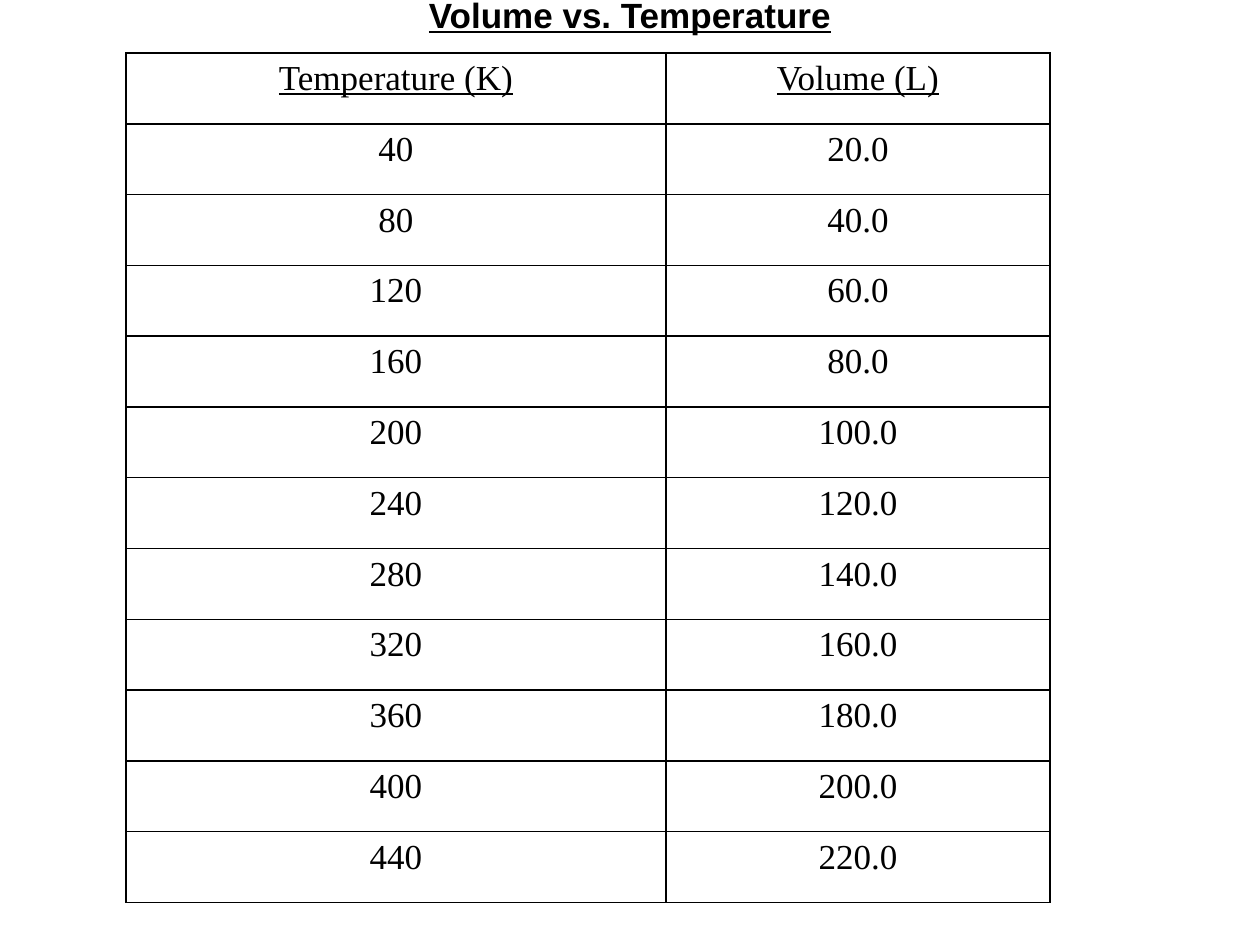
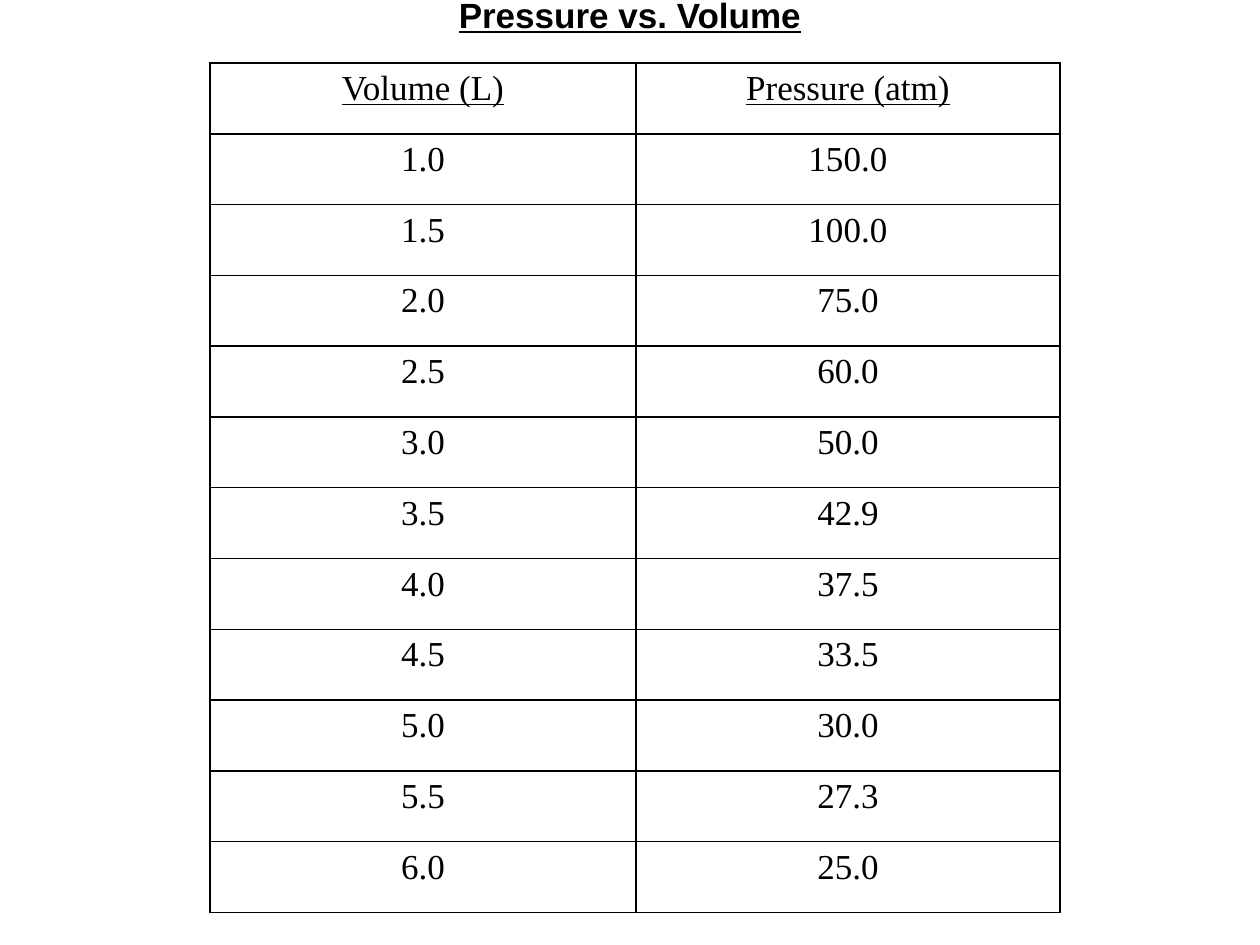
from lxml import etree
from pptx import Presentation
from pptx.dml.color import RGBColor
from pptx.enum.text import MSO_ANCHOR, PP_ALIGN
from pptx.oxml.ns import qn
from pptx.util import Pt

CENTER = PP_ALIGN.CENTER
TOP = MSO_ANCHOR.TOP
COLORS = {"ink": "000000"}
TITLE_FONT, TABLE_FONT = "Arial", "Times New Roman"
TEXT_SIZE = Pt(20)
BORDER_WIDTH = Pt(1)
BORDER_SIDES = ("a:lnL", "a:lnR", "a:lnT", "a:lnB")
SLIDE_WIDTH, SLIDE_HEIGHT = 1260, 945
TITLE_TOP, TITLE_HEIGHT, TITLE_INSET = -15, 92, 8
TABLE_HEIGHT = 850

TABLES = [
    {
        "title": "Volume vs. Temperature",
        "title_width": 428,
        "left": 126,
        "top": 53,
        "columns": (540, 384),
        "rows": [("Temperature (K)", "Volume (L)")]
        + [(str(kelvin), f"{kelvin / 2:.1f}") for kelvin in range(40, 441, 40)],
    },
    {
        "title": "Pressure vs. Volume",
        "title_width": 368,
        "left": 210,
        "top": 63,
        "columns": (426, 424),
        "rows": [
            ("Volume (L)", "Pressure (atm)"),
            ("1.0", "150.0"),
            ("1.5", "100.0"),
            ("2.0", "75.0"),
            ("2.5", "60.0"),
            ("3.0", "50.0"),
            ("3.5", "42.9"),
            ("4.0", "37.5"),
            ("4.5", "33.5"),
            ("5.0", "30.0"),
            ("5.5", "27.3"),
            ("6.0", "25.0"),
        ],
    },
]


def px(length):
    return round(length * 914400 / 126)


def format_text(paragraph, font_name, bold, underline):
    paragraph.alignment = CENTER
    for run in paragraph.runs:
        run.font.name = font_name
        run.font.size = TEXT_SIZE
        run.font.bold = bold
        run.font.underline = underline
        run.font.color.rgb = RGBColor.from_string(COLORS["ink"])


presentation = Presentation()
presentation.slide_width = px(SLIDE_WIDTH)
presentation.slide_height = px(SLIDE_HEIGHT)

for data in TABLES:
    slide = presentation.slides.add_slide(presentation.slide_layouts[6])
    rows, columns = data["rows"], data["columns"]

    frame = slide.shapes.add_table(
        len(rows), len(columns), px(data["left"]), px(data["top"]),
        px(sum(columns)), px(TABLE_HEIGHT))
    table = frame.table
    table.first_row = False
    table.horz_banding = False
    for column, width in zip(table.columns, columns):
        column.width = px(width)

    for row_index, values in enumerate(rows):
        table.rows[row_index].height = px(TABLE_HEIGHT / len(rows))
        for column_index, value in enumerate(values):
            cell = table.cell(row_index, column_index)
            cell.text_frame.text = value
            format_text(cell.text_frame.paragraphs[0], TABLE_FONT, False, row_index == 0)
            cell.fill.background()
            properties = cell._tc.get_or_add_tcPr()
            for position, side in enumerate(BORDER_SIDES):
                border = etree.Element(qn(side), w=str(BORDER_WIDTH))
                fill = etree.SubElement(border, qn("a:solidFill"))
                etree.SubElement(fill, qn("a:srgbClr"), val=COLORS["ink"])
                properties.insert(position, border)

    title_left = (SLIDE_WIDTH - data["title_width"]) // 2
    title = slide.shapes.add_textbox(
        px(title_left), px(TITLE_TOP), px(data["title_width"]), px(TITLE_HEIGHT))
    title.text_frame.text = data["title"]
    title.text_frame.word_wrap = False
    title.text_frame.vertical_anchor = TOP
    title.text_frame.margin_top = px(TITLE_INSET)
    format_text(title.text_frame.paragraphs[0], TITLE_FONT, True, True)

presentation.save("out.pptx")
